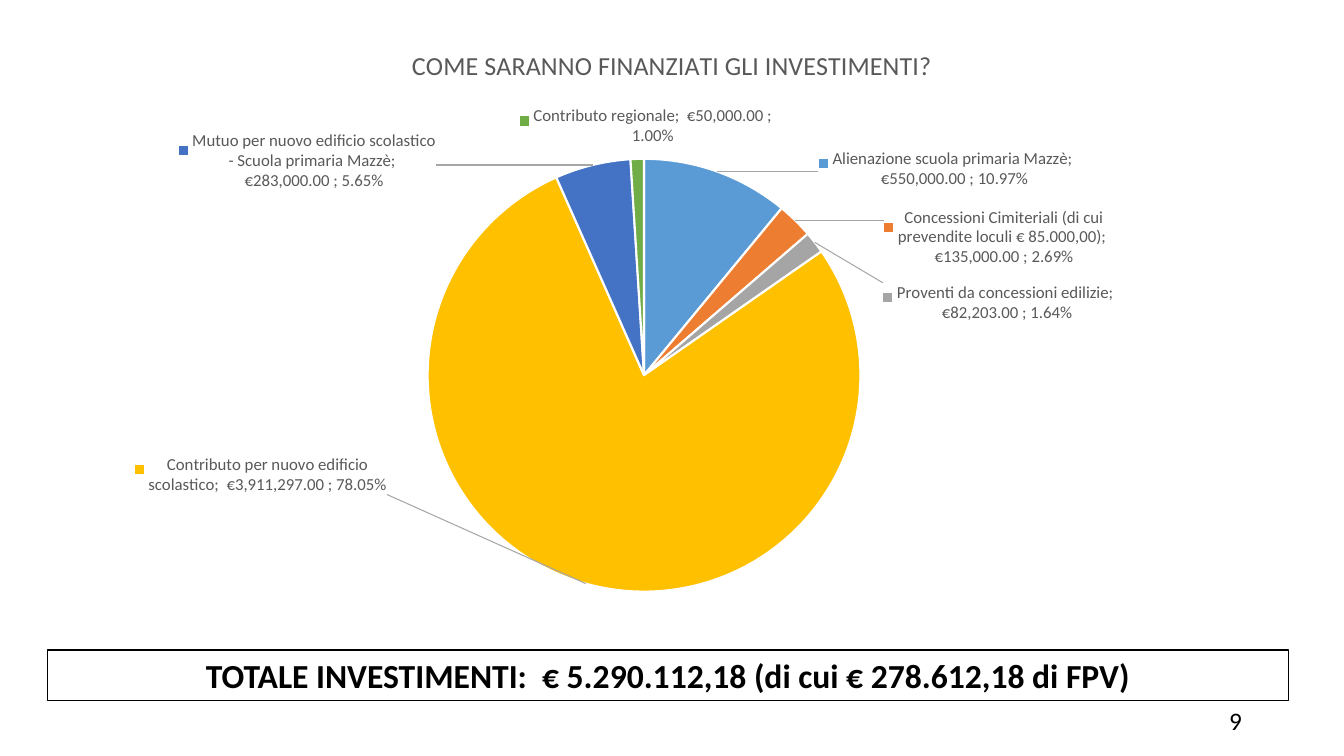
"""Build the slide on how the investments are financed."""
from dataclasses import dataclass

from pptx import Presentation
from pptx.chart.data import CategoryChartData
from pptx.dml.color import RGBColor
from pptx.enum.chart import XL_CHART_TYPE, XL_LABEL_POSITION
from pptx.enum.shapes import MSO_SHAPE
from pptx.enum.text import MSO_ANCHOR, PP_ALIGN
from pptx.oxml import parse_xml
from pptx.oxml.ns import nsdecls, qn
from pptx.util import Cm, Pt

PIE = XL_CHART_TYPE.PIE
OUTER = XL_LABEL_POSITION.OUTSIDE_END
RECT = MSO_SHAPE.RECTANGLE
MIDDLE = MSO_ANCHOR.MIDDLE
CENTER = PP_ALIGN.CENTER
RIGHT = PP_ALIGN.RIGHT


@dataclass(frozen=True)
class Theme:
    font: str = "Calibri"
    black: str = "000000"
    white: str = "FFFFFF"
    gray: str = "595959"
    leader: str = "A6A6A6"
    title: float = 18.6
    label: float = 12
    total: float = 24
    number: float = 18


@dataclass(frozen=True)
class Slice:
    name: str
    euro: int
    color: str
    dx: float
    dy: float


THEME = Theme()
TITLE = "COME SARANNO FINANZIATI GLI INVESTIMENTI?"
SLICES = [
    Slice("Alienazione scuola primaria Mazzè", 550000, "5B9BD5", 8, 3.5),
    Slice("Concessioni Cimiteriali (di cui prevendite loculi € 85.000,00)",
          135000, "ED7D31", 6.8, 8),
    Slice("Proventi da concessioni edilizie", 82203, "A5A5A5", 5.1, 13.2),
    Slice("Contributo per nuovo edificio scolastico",
          3911297, "FFC000", -15.9, -21.2),
    Slice("Mutuo per nuovo edificio scolastico - Scuola primaria Mazzè",
          283000, "4472C4", -12.5, 4.9),
    Slice("Contributo regionale", 50000, "70AD47", 0.7, -1.1),
]


def style(font, size: float, color: str, bold: bool = False) -> None:
    font.name = THEME.font
    font.size = Pt(size)
    font.bold = bold
    font.color.rgb = RGBColor.from_string(color)


def write(frame, text: str, *, size: float, color: str = THEME.black,
          bold: bool = False, align=CENTER) -> None:
    frame.word_wrap = True
    frame.vertical_anchor = MIDDLE
    para = frame.paragraphs[0]
    para.alignment = align
    run = para.add_run()
    run.text = text
    style(run.font, size, color, bold)


def place(node, index: int, x: float, y: float, size: tuple = ()) -> None:
    for old in node.findall(qn("c:layout")):
        node.remove(old)
    parts = [("xMode", "edge"), ("yMode", "edge")] if index != 1 or size else []
    if node.tag == qn("c:title"):
        parts = [("xMode", "edge"), ("yMode", "edge")]
    if size:
        parts.insert(0, ("layoutTarget", "inner"))
    parts += zip("xywh", (round(part / 100, 4) for part in (x, y, *size)))
    inner = "".join(f'<c:{tag} val="{val}"/>' for tag, val in parts)
    node.insert(index, parse_xml(
        f'<c:layout {nsdecls("c")}><c:manualLayout>{inner}'
        "</c:manualLayout></c:layout>"))


def label(series) -> None:
    labels = series.data_labels
    style(labels.font, THEME.label, THEME.gray)
    labels.number_format = "0.00%"
    labels.number_format_is_linked = False
    labels.position = OUTER
    labels.show_value = True
    labels.show_percentage = True
    labels.show_category_name = True
    labels.show_legend_key = True
    for index, item in enumerate(SLICES):
        point = series.points[index]
        point.format.fill.solid()
        point.format.fill.fore_color.rgb = RGBColor.from_string(item.color)
        point.format.line.color.rgb = RGBColor.from_string(THEME.white)
        point.format.line.width = Pt(1.5)
        point.data_label.position = OUTER
        style(point.data_label.font, THEME.label, THEME.gray)


def refine(root) -> None:
    for node, item in zip(root.iter(qn("c:dLbl")), SLICES):
        place(node, 1, item.dx, item.dy)
        node.insert(2, parse_xml(
            f'<c:numFmt {nsdecls("c")} formatCode="0.00%" sourceLinked="0"/>'))
        for flag in ("LegendKey", "Val", "CatName", "Percent"):
            node.find(qn(f"c:show{flag}")).set("val", "1")
    group = next(root.iter(qn("c:dLbls")))
    for tag in ("c:showLeaderLines", "c:leaderLines"):
        for old in group.findall(qn(tag)):
            group.remove(old)
    group.append(parse_xml(f'<c:showLeaderLines {nsdecls("c")} val="1"/>'))
    group.append(parse_xml(
        f'<c:leaderLines {nsdecls("c", "a")}><c:spPr><a:ln w="9525"><a:solidFill>'
        f'<a:srgbClr val="{THEME.leader}"/></a:solidFill></a:ln></c:spPr>'
        "</c:leaderLines>"))
    place(next(root.iter(qn("c:title"))), 1, 29, 4.5)
    place(next(root.iter(qn("c:plotArea"))), 0, 30.64, 22.7, (34.86, 68.1))


def draw_pie(slide) -> None:
    data = CategoryChartData(number_format='" €"#,##0.00" "')
    data.categories = [item.name for item in SLICES]
    data.add_series(TITLE, [item.euro for item in SLICES])
    chart = slide.shapes.add_chart(
        PIE, Cm(1.19), Cm(0.36), Cm(31.29), Cm(16.03), data).chart
    style(chart.font, THEME.label, THEME.gray)
    chart.has_legend = False
    chart.has_title = True
    run = chart.chart_title.text_frame.paragraphs[0].add_run()
    run.text = TITLE
    style(run.font, THEME.title, THEME.gray)
    plot = chart.plots[0]
    plot.vary_by_categories = True
    label(plot.series[0])
    refine(chart.element)


def draw_total(slide) -> None:
    box = slide.shapes.add_shape(RECT, Cm(1.19), Cm(16.38), Cm(31.29), Cm(1.27))
    box.shadow.inherit = False
    box.fill.background()
    box.line.color.rgb = RGBColor.from_string(THEME.black)
    box.line.width = Pt(0.75)
    write(box.text_frame, "TOTALE INVESTIMENTI:  € 5.290.112,18 "
          "(di cui € 278.612,18 di FPV)", size=THEME.total, bold=True)


def draw_number(slide) -> None:
    box = slide.shapes.add_textbox(Cm(23.93), Cm(17.65), Cm(7.62), Cm(1.02))
    write(box.text_frame, "9", size=THEME.number, align=RIGHT)


def main() -> None:
    deck = Presentation()
    deck.slide_width, deck.slide_height = Cm(33.87), Cm(19.05)
    slide = deck.slides.add_slide(deck.slide_layouts[6])
    draw_total(slide)
    draw_number(slide)
    draw_pie(slide)
    deck.save("out.pptx")


if __name__ == "__main__":
    main()
